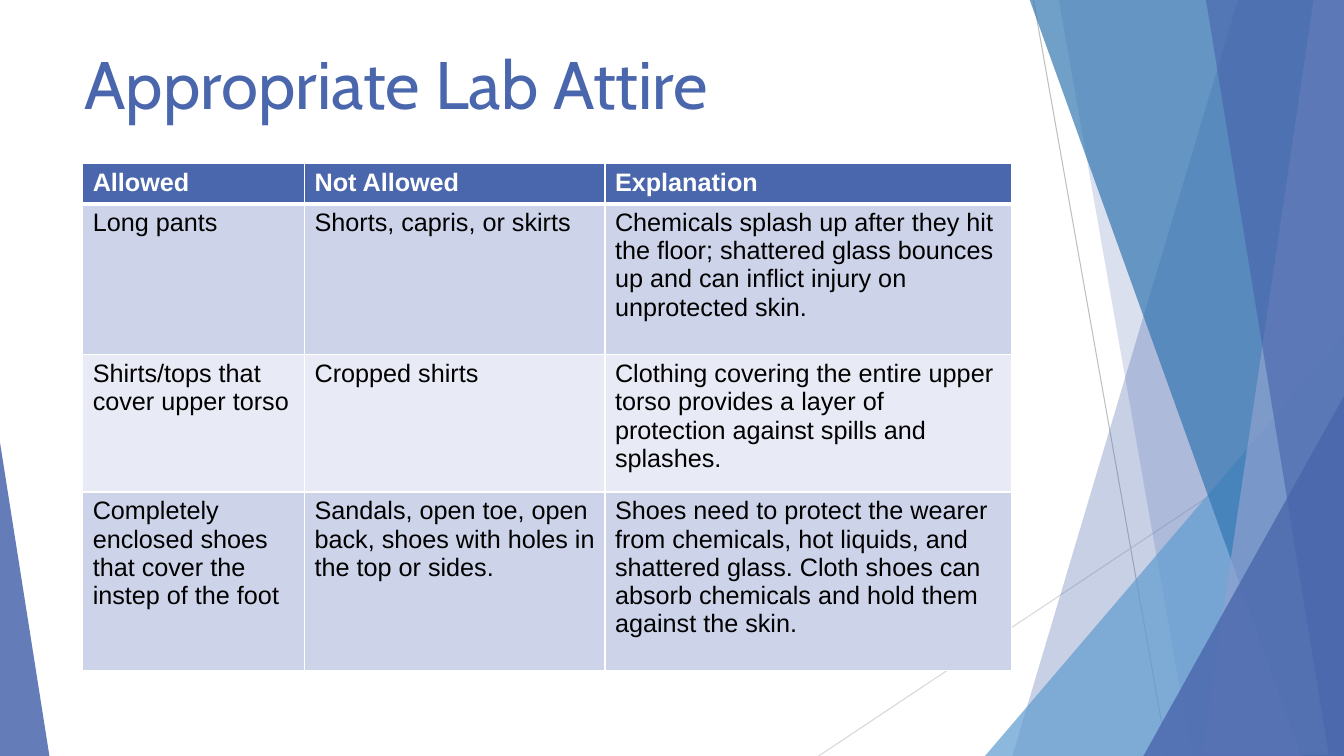
"""Build the lab attire slide: faceted side panels, a title and a table."""
from lxml import etree
from pptx import Presentation
from pptx.dml.color import RGBColor
from pptx.enum.shapes import MSO_CONNECTOR, MSO_SHAPE
from pptx.enum.text import MSO_ANCHOR
from pptx.oxml.ns import qn
from pptx.util import Inches, Pt

STRAIGHT = MSO_CONNECTOR.STRAIGHT
TRIANGLE = MSO_SHAPE.ISOSCELES_TRIANGLE
MIDDLE = MSO_ANCHOR.MIDDLE

COLORS = {
    "indigo": "4A66AC", "sky": "629DD1", "ocean": "3477B2", "haze": "8FA1CF",
    "grey": "BFBFBF", "pale grey": "D8D8D8", "white": "FFFFFF", "black": "000000",
    "odd row": "CDD4EA", "even row": "E8EBF5",
}
WIDTH, HEIGHT = 13.33, 7.5
BLEED = -0.01

TITLE = "Appropriate Lab Attire"
ATTIRE = [
    ("Allowed", "Not Allowed", "Explanation"),
    ("Long pants", "Shorts, capris, or skirts",
     "Chemicals splash up after they hit the floor; shattered glass bounces up "
     "and can inflict injury on unprotected skin."),
    ("Shirts/tops that cover upper torso", "Cropped shirts",
     "Clothing covering the entire upper torso provides a layer of protection "
     "against spills and splashes."),
    ("Completely enclosed shoes that cover the instep of the foot",
     "Sandals, open toe, open back, shoes with holes in the top or sides.",
     "Shoes need to protect the wearer from chemicals, hot liquids, and shattered "
     "glass. Cloth shoes can absorb chemicals and hold them against the skin."),
]
COLUMN_WIDTHS = (2.2, 2.98, 4.03)
ROW_HEIGHTS = (0.38, 1.5, 1.36, 1.77)

RAYS = [((10.25, 0), (11.58, HEIGHT), "grey"),
        ((WIDTH, 4.03), (8.12, HEIGHT), "pale grey")]
# Each panel: top-left x, bottom-left x, bottom y, colour, opacity
# Each wedge: left, top, width, apex position, colour, opacity
FACETS = [
    ("panel", (12.28, 10.04, 7.5), "indigo", 30),
    ("panel", (10.5, 11.82, 7.5), "indigo", 20),
    ("wedge", (9.77, 3.33, 3.56, 1), "sky", 72),
    ("panel", (10.21, 12.91, 7.5), "ocean", 70),
    ("panel", (13.03, 11.92, 7.49), "haze", 70),
    ("panel", (11.96, 13.18, 7.49), "indigo", 65),
    ("wedge", (11.34, 3.93, 1.99, 1), "indigo", 80),
    ("wedge", (0, 4.39, 0.49, 0), "indigo", 85),
]


def rgb(name):
    return RGBColor.from_string(COLORS[name])


def add_ray(shapes, start, end, color):
    ray = shapes.add_connector(STRAIGHT, *map(Inches, start + end))
    ray.line.color.rgb = rgb(color)
    ray.line.width = Pt(0.75)
    etree.SubElement(ray._element.spPr, qn("a:effectLst"))


def add_panel(shapes, top_x, bottom_x, bottom):
    corners = [(WIDTH, BLEED), (WIDTH, bottom), (bottom_x, bottom)]
    outline = shapes.build_freeform(Inches(top_x), Inches(BLEED))
    outline.add_line_segments([(Inches(x), Inches(y)) for x, y in corners], close=True)
    return outline.convert_to_shape()


def add_wedge(shapes, left, top, width, apex):
    wedge = shapes.add_shape(TRIANGLE, *map(Inches, (left, top, width, HEIGHT - top)))
    wedge.adjustments[0] = apex
    return wedge


def add_facet(shapes, kind, geometry, color, opacity):
    facet = {"panel": add_panel, "wedge": add_wedge}[kind](shapes, *geometry)
    facet.shadow.inherit = False
    facet.line.fill.background()
    facet.fill.solid()
    facet.fill.fore_color.rgb = rgb(color)
    tint = facet._element.spPr.find(qn("a:solidFill"))[0]
    etree.SubElement(tint, qn("a:alpha"), val=str(opacity * 1000))


def add_title(shapes):
    box = shapes.add_textbox(*map(Inches, (0.74, 0.5, 9.4, 0.75)))
    frame = box.text_frame
    frame.word_wrap = True
    frame.vertical_anchor = MIDDLE
    heading = frame.paragraphs[0]
    heading.text = TITLE
    heading.line_spacing = 0.9
    heading.font.name = "Cabin"
    heading.font.size = Pt(48)
    heading.font.color.rgb = rgb("indigo")


def set_borders(cell, row):
    widths = {"L": 1, "R": 1, "T": 3 if row == 1 else 1, "B": 3 if row == 0 else 1}
    for position, (side, points) in enumerate(widths.items()):
        border = etree.Element(qn(f"a:ln{side}"), w=str(Pt(points)))
        fill = etree.SubElement(border, qn("a:solidFill"))
        etree.SubElement(fill, qn("a:srgbClr"), val=COLORS["white"])
        cell._tc.get_or_add_tcPr().insert(position, border)


def add_attire_table(shapes):
    size = (sum(COLUMN_WIDTHS), sum(ROW_HEIGHTS))
    table = shapes.add_table(len(ATTIRE), len(COLUMN_WIDTHS),
                             *map(Inches, (0.82, 1.62) + size)).table
    for column, width in zip(table.columns, COLUMN_WIDTHS):
        column.width = Inches(width)
    for row, (texts, height) in enumerate(zip(ATTIRE, ROW_HEIGHTS)):
        table.rows[row].height = Inches(height)
        header = row == 0
        band = "indigo" if header else ("even row", "odd row")[row % 2]
        for column, text in enumerate(texts):
            cell = table.cell(row, column)
            cell.fill.solid()
            cell.fill.fore_color.rgb = rgb(band)
            set_borders(cell, row)
            entry = cell.text_frame.paragraphs[0]
            entry.text = text
            entry.font.name = "Arial"
            entry.font.size = Pt(18)
            entry.font.bold = header
            entry.font.color.rgb = rgb("white" if header else "black")


def main():
    deck = Presentation()
    deck.slide_width, deck.slide_height = Inches(WIDTH), Inches(HEIGHT)
    shapes = deck.slides.add_slide(deck.slide_layouts[6]).shapes
    for ray in RAYS:
        add_ray(shapes, *ray)
    for facet in FACETS:
        add_facet(shapes, *facet)
    add_title(shapes)
    add_attire_table(shapes)
    deck.save("out.pptx")


if __name__ == "__main__":
    main()
